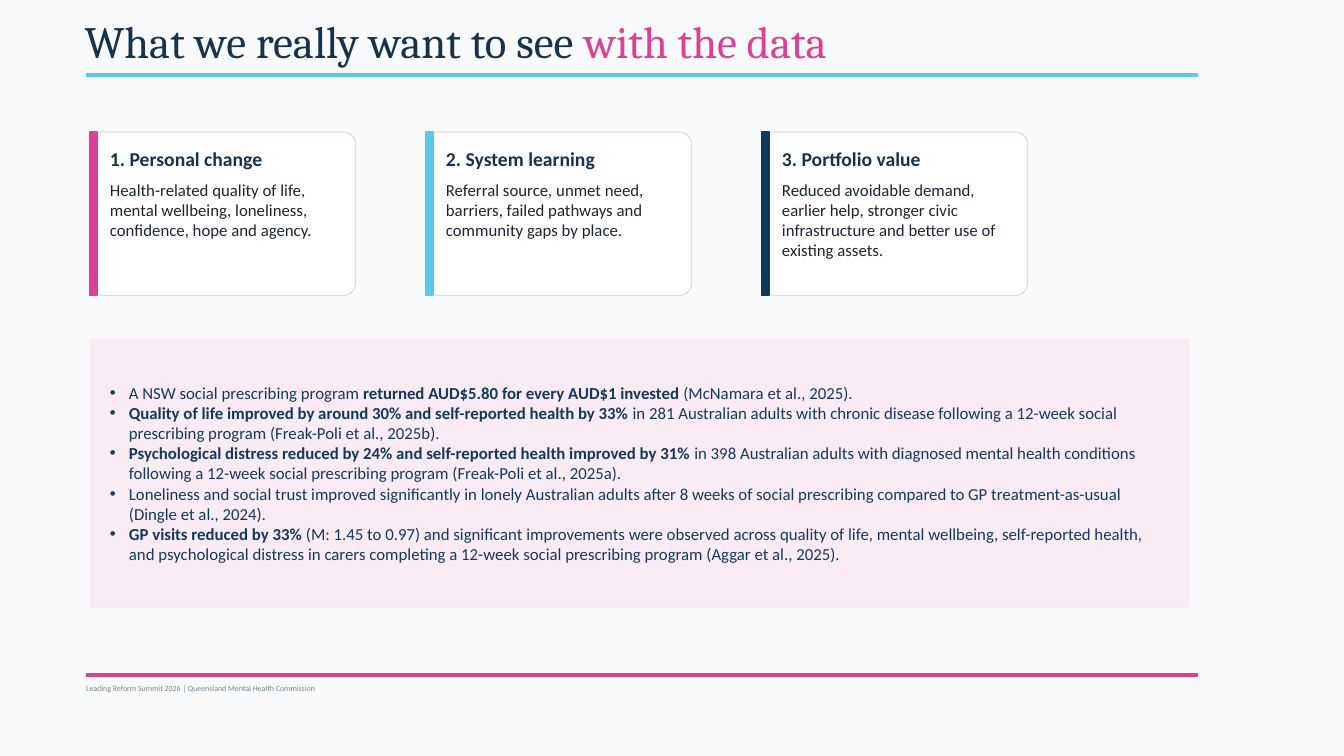
from lxml.etree import SubElement
from pptx import Presentation
from pptx.dml.color import RGBColor
from pptx.enum.shapes import MSO_CONNECTOR, MSO_SHAPE
from pptx.enum.text import MSO_ANCHOR, MSO_AUTO_SIZE, PP_ALIGN
from pptx.oxml.ns import qn
from pptx.util import Inches, Pt

COLOURS = {
    "page": "F8FAFB", "white": "FFFFFF", "outline": "D8E0E4",
    "pink": "DD4197", "blue": "57C9E9", "navy": "0F3A5E",
    "heading": "17324D", "body": "1C2530", "blush": "FBEBF4", "footer": "7A858E",
}
FORMATS = {
    "title": {"name": "Cambria", "size": Pt(32), "bold": False},
    "heading": {"name": "Calibri", "size": Pt(14), "bold": True},
    "body": {"name": "Calibri", "size": Pt(12), "bold": False},
    "footer": {"name": "Calibri", "size": Pt(5.7), "bold": False},
}
COLUMNS, ROWS = 120, 75
CARD_LEFT, CARD_PITCH = 8, 30
CARDS = [
    ("pink", "1. Personal change",
     "Health-related quality of life, mental wellbeing, loneliness, confidence, hope and agency."),
    ("blue", "2. System learning",
     "Referral source, unmet need, barriers, failed pathways and community gaps by place."),
    ("navy", "3. Portfolio value",
     "Reduced avoidable demand, earlier help, stronger civic infrastructure and better use of existing assets."),
]
FINDINGS = [
    ("A NSW social prescribing program ", "returned AUD$5.80 for every AUD$1 invested ",
     "(McNamara et al., 2025)."),
    ("", "Quality of life improved by around 30% and self-reported health by 33% ",
     "in 281 Australian adults with chronic disease following a 12-week social prescribing program (Freak-Poli et al., 2025b)."),
    ("", "Psychological distress reduced by 24% and self-reported health improved by 31% ",
     "in 398 Australian adults with diagnosed mental health conditions following a 12-week social prescribing program (Freak-Poli et al., 2025a)."),
    ("Loneliness and social trust improved significantly in lonely Australian adults after 8 weeks of social prescribing compared to GP treatment-as-usual (Dingle et al., 2024).", "", ""),
    ("", "GP visits reduced by 33% ",
     "(M: 1.45 to 0.97) and significant improvements were observed across quality of life, mental wellbeing, self-reported health, and psychological distress in carers completing a 12-week social prescribing program (Aggar et al., 2025)."),
]


def colour(key):
    return RGBColor.from_string(COLOURS[key])


def assign(target, values):
    for name, value in values.items():
        setattr(target, name, value)


class SlideBuilder:
    """Draws styled elements on one slide, placed by grid columns and rows."""

    def __init__(self, deck):
        self.column = deck.slide_width / COLUMNS
        self.row = deck.slide_height / ROWS
        self.page = deck.slides.add_slide(deck.slide_layouts[1])
        fill = self.page.background.fill
        fill.solid()
        fill.fore_color.rgb = colour("page")

    def place(self, left, top, width, height):
        return (round(left * self.column), round(top * self.row),
                round(width * self.column), round(height * self.row))

    def rule(self, top, key):
        left, height, width, _ = self.place(7.65, top, 99.3, 0)
        line = self.page.shapes.add_connector(
            MSO_CONNECTOR.STRAIGHT, left, height, left + width, height)
        line.line.color.rgb = colour(key)
        line.line.width = Pt(3)
        SubElement(line._element.spPr, qn("a:effectLst"))

    def block(self, kind, area, fill, outline=None, weight=1):
        box = self.page.shapes.add_shape(kind, *self.place(*area))
        box.shadow.inherit = False
        box.fill.solid()
        box.fill.fore_color.rgb = colour(fill)
        if outline:
            box.line.color.rgb = colour(outline)
            box.line.width = Pt(weight)
        else:
            box.line.fill.background()
        return box

    def span(self, para, text, style, key, **changes):
        run = para.add_run()
        run.text = text
        assign(run.font, {**FORMATS[style], **changes})
        run.font.color.rgb = colour(key)

    def frame(self, box, anchor, margin=0):
        frame = box.text_frame
        assign(frame, {
            "word_wrap": True, "auto_size": MSO_AUTO_SIZE.NONE, "vertical_anchor": anchor,
            "margin_left": margin, "margin_right": margin,
            "margin_top": margin // 2, "margin_bottom": margin // 2,
        })
        return frame

    def text(self, area, words, style, key, anchor=MSO_ANCHOR.MIDDLE):
        box = self.page.shapes.add_textbox(*self.place(*area))
        self.span(self.frame(box, anchor).paragraphs[0], words, style, key)

    def placeholder(self, box, area, margin=0):
        assign(box, dict(zip(("left", "top", "width", "height"), self.place(*area))))
        return self.frame(box, MSO_ANCHOR.MIDDLE, margin)

    def title(self, area, parts):
        para = self.placeholder(self.page.shapes.title, area, Inches(0.1)).paragraphs[0]
        assign(para, {"alignment": PP_ALIGN.LEFT, "line_spacing": 0.9})
        for words, key in parts:
            self.span(para, words, "title", key)

    def bullets(self, area, items, key):
        frame = self.placeholder(self.page.placeholders[1], area)
        for index, item in enumerate(items):
            para = frame.add_paragraph() if index else frame.paragraphs[0]
            properties = para._p.get_or_add_pPr()
            properties.set("marL", str(Inches(0.19)))
            properties.set("indent", str(-Inches(0.19)))
            bullet_colour = SubElement(properties, qn("a:buClr"))
            SubElement(bullet_colour, qn("a:srgbClr"), val=COLOURS[key])
            SubElement(properties, qn("a:buFont"), typeface="Arial")
            SubElement(properties, qn("a:buChar"), char="•")
            assign(para, {"space_before": Pt(0), "alignment": PP_ALIGN.LEFT})
            for words, bold in zip(item, (False, True, False)):
                if words:
                    self.span(para, words, "body", key, bold=bold)

    def card(self, left, key, heading, words):
        card = self.block(MSO_SHAPE.ROUNDED_RECTANGLE, (left, 13.1, 23.75, 16.2),
                          "white", "outline", 0.8)
        card.adjustments[0] = 0.075
        self.block(MSO_SHAPE.RECTANGLE, (left + 0.03, 13.1, 0.63, 16.2), key, key)
        self.text((left + 1.82, 14.4, 20.9, 2.6), heading, "heading", "heading")
        self.text((left + 1.82, 17.8, 20.4, 10.4), words, "body", "body", MSO_ANCHOR.TOP)


def main():
    deck = Presentation()
    assign(deck, {"slide_width": Inches(13.33), "slide_height": Inches(7.5)})
    builder = SlideBuilder(deck)
    builder.rule(7.45, "blue")
    builder.rule(67, "pink")
    for index, card in enumerate(CARDS):
        builder.card(CARD_LEFT + index * CARD_PITCH, *card)
    panel = builder.block(MSO_SHAPE.RECTANGLE, (CARD_LEFT, 33.6, 98.2, 26.7), "blush")
    tree = builder.page.shapes._spTree
    tree.remove(panel._element)
    tree.insert(2, panel._element)
    builder.bullets((9.8, 33.6, 94.9, 26.7), FINDINGS, "navy")
    builder.title((6.65, 1.7, 95.7, 5.3),
                  [("What we really want to see ", "heading"), ("with the data", "pink")])
    builder.text((7.7, 67.5, 58.5, 1.6),
                 "Leading Reform Summit 2026 | Queensland Mental Health Commission",
                 "footer", "footer")
    deck.save("out.pptx")


if __name__ == "__main__":
    main()
